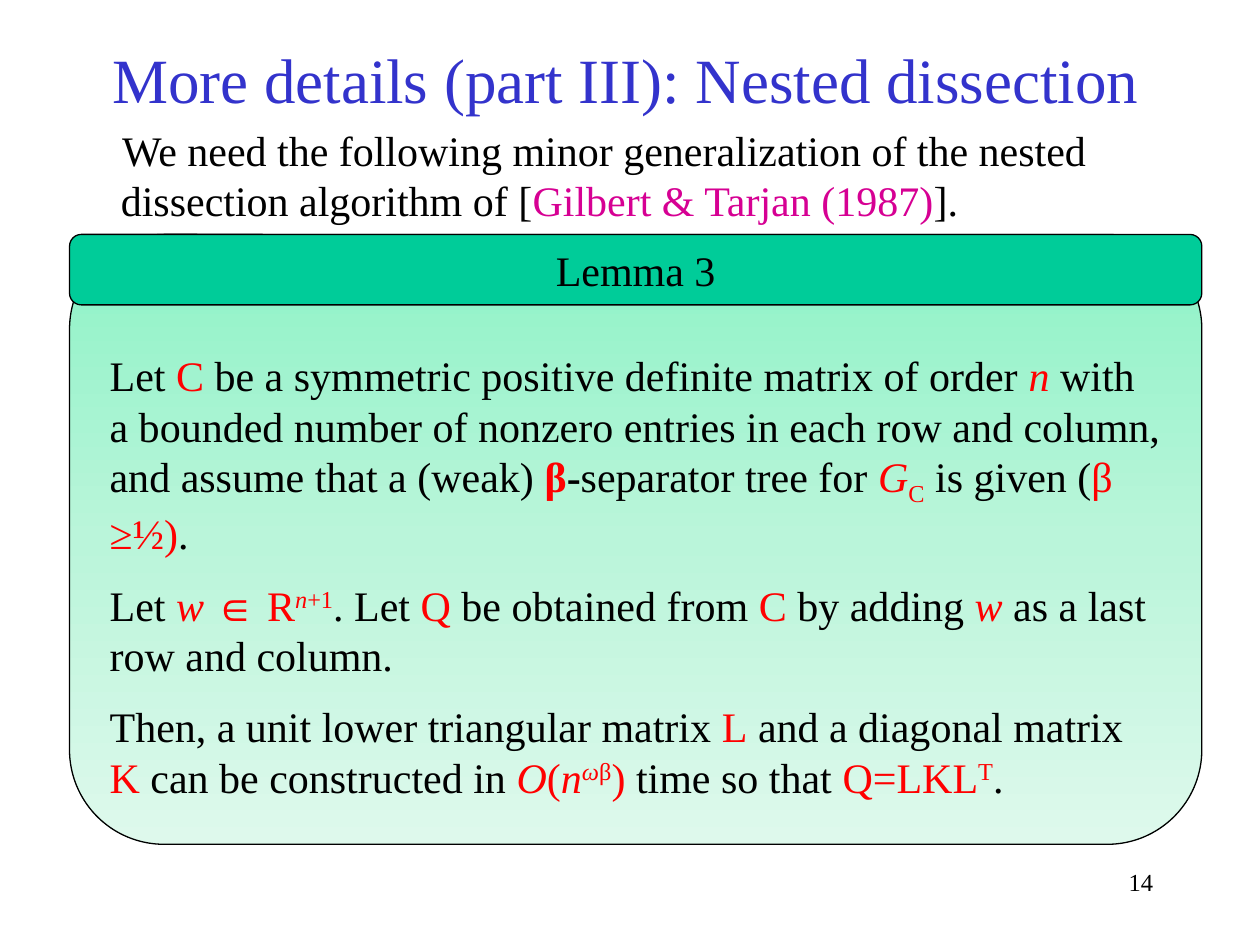
from copy import deepcopy

from pptx import Presentation
from pptx.dml.color import RGBColor
from pptx.enum.shapes import MSO_SHAPE
from pptx.enum.text import MSO_ANCHOR, PP_ALIGN
from pptx.util import Pt

ROUND = MSO_SHAPE.ROUNDED_RECTANGLE
TOP, MID = MSO_ANCHOR.TOP, MSO_ANCHOR.MIDDLE
LEFT, MAIN, RIGHT = PP_ALIGN.LEFT, PP_ALIGN.CENTER, PP_ALIGN.RIGHT
BLACK, RED, BLUE, PINK = "000000", "FF0000", "3333CC", "D60093"

# Run styles: colour, then what differs from plain text
STYLES = {
    "": (BLACK, {}),
    "bold": (BLACK, {"bold": True}),
    "title": (BLUE, {}),
    "cite": (PINK, {}),
    "red": (RED, {}),
    "var": (RED, {"italic": True}),
    "strong": (RED, {"bold": True}),
    "sub": (RED, {"base": -25}),
    "sup": (RED, {"base": 30}),
    "supvar": (RED, {"italic": True, "base": 30}),
}


def rgb(code):
    return RGBColor.from_string(code)


def write(shape, paras, size=24, align=LEFT, anchor=TOP, gap=12):
    frame = shape.text_frame
    for name, value in {"word_wrap": True, "vertical_anchor": anchor}.items():
        setattr(frame, name, value)
    for i, runs in enumerate(paras):
        para = frame.paragraphs[0] if i == 0 else frame.add_paragraph()
        para.alignment = align
        para.space_before = Pt(gap if i else 0)
        for text, style in runs:
            run = para.add_run()
            run.text = text
            color, extra = STYLES[style]
            look = {"name": "Times New Roman", "size": Pt(size), **extra}
            base = look.pop("base", None)
            for name, value in look.items():
                setattr(run.font, name, value)
            run.font.color.rgb = rgb(color)
            if base:
                run._r.get_or_add_rPr().set("baseline", str(base * 1000))


deck = Presentation()
deck.slide_width, deck.slide_height = Pt(720), Pt(540)
slide = deck.slides.add_slide(deck.slide_layouts[6])
shapes = slide.shapes

# Page number
page = shapes.add_textbox(Pt(516), Pt(492), Pt(150), Pt(36))
write(page, [[("14", "")]], size=14, align=RIGHT)

# Title
title = shapes.add_textbox(Pt(33), Pt(18.5), Pt(649), Pt(52.5))
write(title, [[("More details (part III): Nested dissection", "title")]],
      size=36, align=MAIN, anchor=MID)

# Lead-in
intro = shapes.add_textbox(Pt(48), Pt(67.5), Pt(629), Pt(65.5))
write(intro, [[
    ("We need the following minor generalization of the nested "
     "dissection algorithm of [", ""),
    ("Gilbert & Tarjan (1987)", "cite"), ("].", ""),
]])
props = intro.text_frame.paragraphs[0]._p.get_or_add_pPr()
for name, value in {"marL": Pt(14), "indent": Pt(0.7)}.items():
    props.set(name, str(int(value)))

# Lemma panel and its header bar share left, top and width
left, top, width = Pt(39.75), Pt(134), Pt(647)
panel = shapes.add_shape(ROUND, left, top, width, Pt(348.5))
header = shapes.add_shape(ROUND, left, top, width, Pt(40.25))
for box in (panel, header):
    box.shadow.inherit = False
    box.line.color.rgb = rgb(BLACK)
    box.line.width = Pt(0.75)

# Panel gradient, from top to bottom
panel.adjustments[0] = 0.155
panel.fill.gradient()
panel.fill.gradient_angle = 270
last = panel.fill.gradient_stops[1]._gs
last.addprevious(deepcopy(last))
shades = [(0, "8CF2C6"), (0.5, "BAF5DA"), (1, "DEF9EC")]
for stop, (place, code) in zip(panel.fill.gradient_stops, shades):
    stop.position = place
    stop.color.rgb = rgb(code)

# Header bar
header.fill.solid()
header.fill.fore_color.rgb = rgb("00CC99")
write(header, [[("Lemma 3", "")]], align=MAIN)

# Lemma text, starting below the header bar
panel.text_frame.margin_top = Pt(50)
write(panel, [
    [("Let ", ""), ("C", "red"),
     (" be a symmetric positive definite matrix of order ", ""),
     ("n", "var"),
     (" with a bounded number of nonzero entries in each row and column, "
      "and assume that a (weak) ", ""),
     ("β", "strong"), ("-", "bold"), ("separator tree for ", ""),
     ("G", "var"), ("C", "sub"), (" is given (", ""),
     ("β ≥½)", "red"), (".", "")],
    [("Let ", ""), ("w ", "var"), ("∈ R", "red"), ("n", "supvar"),
     ("+1", "sup"), (". Let ", ""), ("Q", "red"),
     (" be obtained from ", ""), ("C", "red"), (" by adding ", ""),
     ("w", "var"), (" as a last row and column.", "")],
    [("Then, a unit lower triangular matrix ", ""), ("L", "red"),
     (" and a diagonal matrix ", ""), ("K", "red"),
     (" can be constructed in ", ""), ("O", "var"), ("(", "red"),
     ("n", "var"), ("ω", "supvar"), ("β", "sup"), (") ", "red"),
     ("time so that ", ""), ("Q=LKL", "red"), ("T", "sup"), (".", "")],
])

deck.save("out.pptx")
